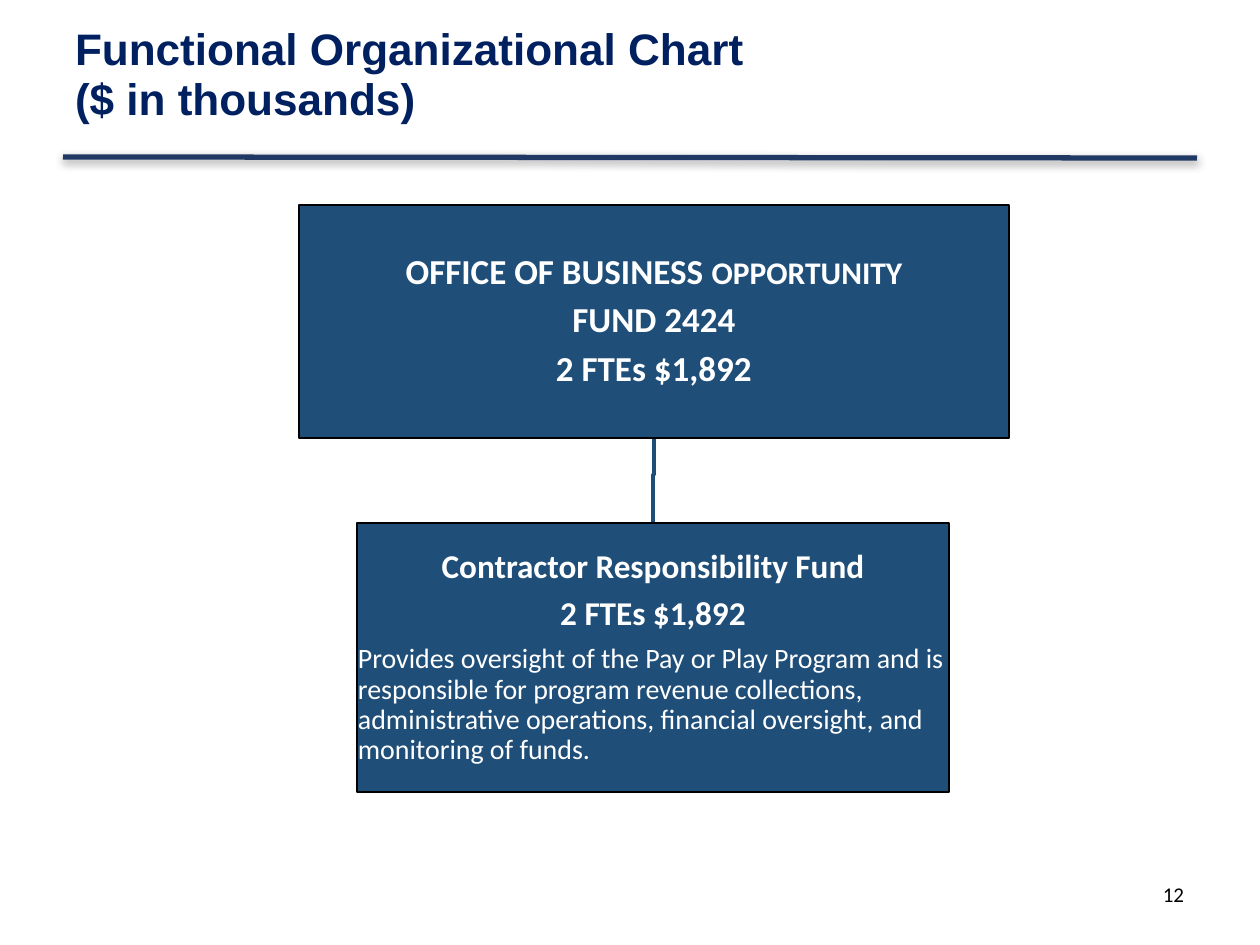
from lxml import etree
from pptx import Presentation
from pptx.dml.color import RGBColor
from pptx.enum.shapes import MSO_CONNECTOR, MSO_SHAPE
from pptx.enum.text import MSO_ANCHOR, PP_ALIGN
from pptx.oxml import parse_xml
from pptx.oxml.ns import nsdecls, qn
from pptx.util import Emu, Pt

SCALE = 914400 / 126
STRAIGHT = MSO_CONNECTOR.STRAIGHT
RECTANGLE = MSO_SHAPE.RECTANGLE
TOP, MIDDLE = MSO_ANCHOR.TOP, MSO_ANCHOR.MIDDLE
LEFT, CENTER, RIGHT = PP_ALIGN.LEFT, PP_ALIGN.CENTER, PP_ALIGN.RIGHT

BOX_BLUE, RULE_BLUE, TITLE_BLUE = "1F4E79", "203864", "002060"
WHITE, BLACK = "FFFFFF", "000000"

OFFICE_BOX = (299, 205, 710, 233)
FUND_BOX = (357, 523, 592, 269)
OFFICE_LINES = [
    (CENTER, [("OFFICE OF BUSINESS ", 20, True), ("OPPORTUNITY", 18, True)]),
    (CENTER, [("FUND 2424", 20, True)]),
    (CENTER, [("2 FTEs $1,892", 20, True)]),
]
FUND_LINES = [
    (CENTER, [("Contractor Responsibility Fund", 19, True)]),
    (CENTER, [("2 FTEs $1,892", 19, True)]),
    (LEFT, [(
        "Provides oversight of the Pay or Play Program and is responsible for "
        "program revenue collections, administrative operations, financial "
        "oversight, and monitoring of funds.", 16, False)]),
]


def px(length):
    """Turn px into EMU."""
    return Emu(round(length * SCALE))


def color(value):
    """Turn a hex string into a colour."""
    return RGBColor.from_string(value)


def set_values(target, values):
    """Set each named attribute of the target."""
    for name, value in values.items():
        setattr(target, name, value)


def set_frame(text_frame, anchor, margins):
    """Set wrapping, anchor and the left, top, right and bottom margins in px."""
    sides = ("margin_left", "margin_top", "margin_right", "margin_bottom")
    set_values(text_frame, {"word_wrap": True, "vertical_anchor": anchor,
                            **dict(zip(sides, map(px, margins)))})


def add_run(paragraph, text, size, bold, hue, font_name):
    """Add one formatted run to a paragraph."""
    run = paragraph.add_run()
    run.text = text
    set_values(run.font, {"size": Pt(size), "bold": bold, "name": font_name})
    run.font.color.rgb = color(hue)


def add_title(slide, box, lines):
    """Add the slide title, one line of text to each line given."""
    left, top, width, height = box
    text_frame = slide.shapes.add_textbox(*map(px, box)).text_frame
    set_frame(text_frame, MIDDLE, (12, 0, 0, 48))
    paragraph = text_frame.paragraphs[0]
    paragraph.line_spacing = 0.95
    for index, line in enumerate(lines):
        if index:
            paragraph.add_line_break()
        add_run(paragraph, line, 25.2, True, TITLE_BLUE, "Arial")


def add_rule(slide, start, end):
    """Add the shadowed rule below the title."""
    rule = slide.shapes.add_connector(STRAIGHT, *map(px, start + end))
    rule.line.width = Pt(3)
    rule.line.color.rgb = color(RULE_BLUE)
    effects = etree.SubElement(rule._element.spPr, qn("a:effectLst"))
    effects.append(parse_xml(
        f'<a:outerShdw {nsdecls("a")} blurRad="{Pt(5)}" dist="{Pt(1.6)}" '
        'dir="5400000" rotWithShape="0"><a:srgbClr val="000000">'
        '<a:alpha val="38000"/></a:srgbClr></a:outerShdw>'))


def add_branch(slide, parent, child):
    """Add the stepped line from the parent box to the child box."""
    start_x, start_y = parent[0] + parent[2] // 2, parent[1] + parent[3]
    end_x, end_y = child[0] + child[2] // 2, child[1]
    step_y = start_y + 37
    builder = slide.shapes.build_freeform(start_x, start_y, scale=SCALE)
    builder.add_line_segments(
        [(start_x, step_y), (end_x, step_y), (end_x, end_y)], close=False)
    branch = builder.convert_to_shape()
    branch.shadow.inherit = False
    branch.fill.background()
    branch.line.width = Pt(2.25)
    branch.line.color.rgb = color(BOX_BLUE)


def add_unit(slide, box, lines, space_after):
    """Add one box of the organization chart with its text."""
    shape = slide.shapes.add_shape(RECTANGLE, *map(px, box))
    shape.shadow.inherit = False
    shape.fill.solid()
    shape.fill.fore_color.rgb = color(BOX_BLUE)
    shape.line.width = Pt(1)
    shape.line.color.rgb = color(BLACK)
    text_frame = shape.text_frame
    set_frame(text_frame, MIDDLE, (1, 1, 1, 1))
    for index, (alignment, runs) in enumerate(lines):
        paragraph = text_frame.add_paragraph() if index else text_frame.paragraphs[0]
        set_values(paragraph, {"alignment": alignment, "line_spacing": 0.9,
                               "space_after": Pt(space_after)})
        for text, size, bold in runs:
            add_run(paragraph, text, size, bold, WHITE, "Calibri")


def add_page_number(slide, box, number):
    """Add the page number at the right of its box."""
    text_frame = slide.shapes.add_textbox(*map(px, box)).text_frame
    set_frame(text_frame, TOP, (13, 6, 13, 6))
    paragraph = text_frame.paragraphs[0]
    paragraph.alignment = RIGHT
    add_run(paragraph, number, 12, False, BLACK, "Calibri")


def main():
    """Build the slide and save it."""
    presentation = Presentation()
    set_values(presentation, {"slide_width": px(1260), "slide_height": px(945)})
    slide = presentation.slides.add_slide(presentation.slide_layouts[6])
    add_rule(slide, (63, 157), (1197, 158))
    add_title(slide, (63, 42, 864, 115),
              ["Functional Organizational Chart", "($ in thousands)"])
    add_branch(slide, OFFICE_BOX, FUND_BOX)
    add_unit(slide, OFFICE_BOX, OFFICE_LINES, 6)
    add_unit(slide, FUND_BOX, FUND_LINES, 6.65)
    add_page_number(slide, (903, 876, 294, 50), "12")
    presentation.save("out.pptx")


if __name__ == "__main__":
    main()
